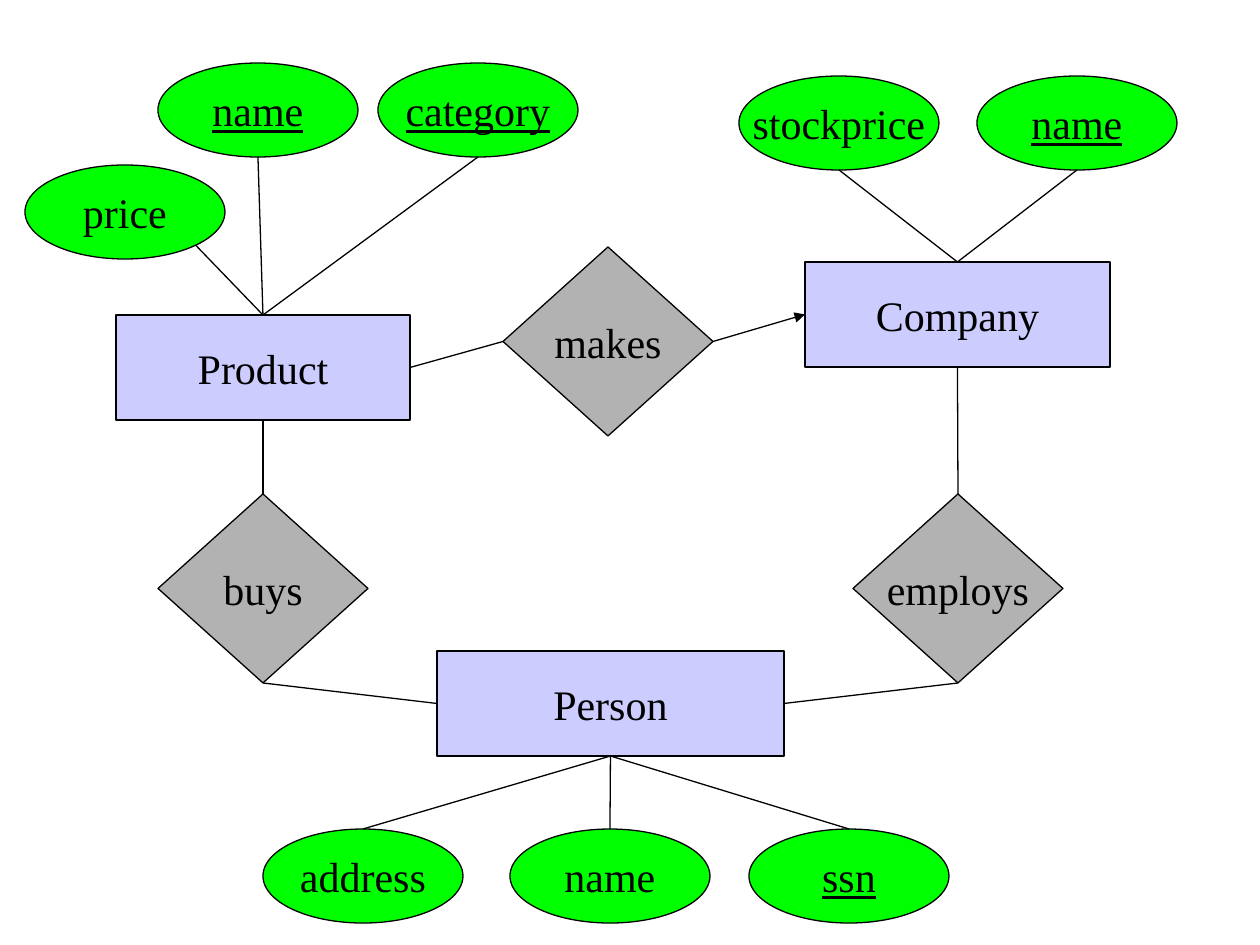
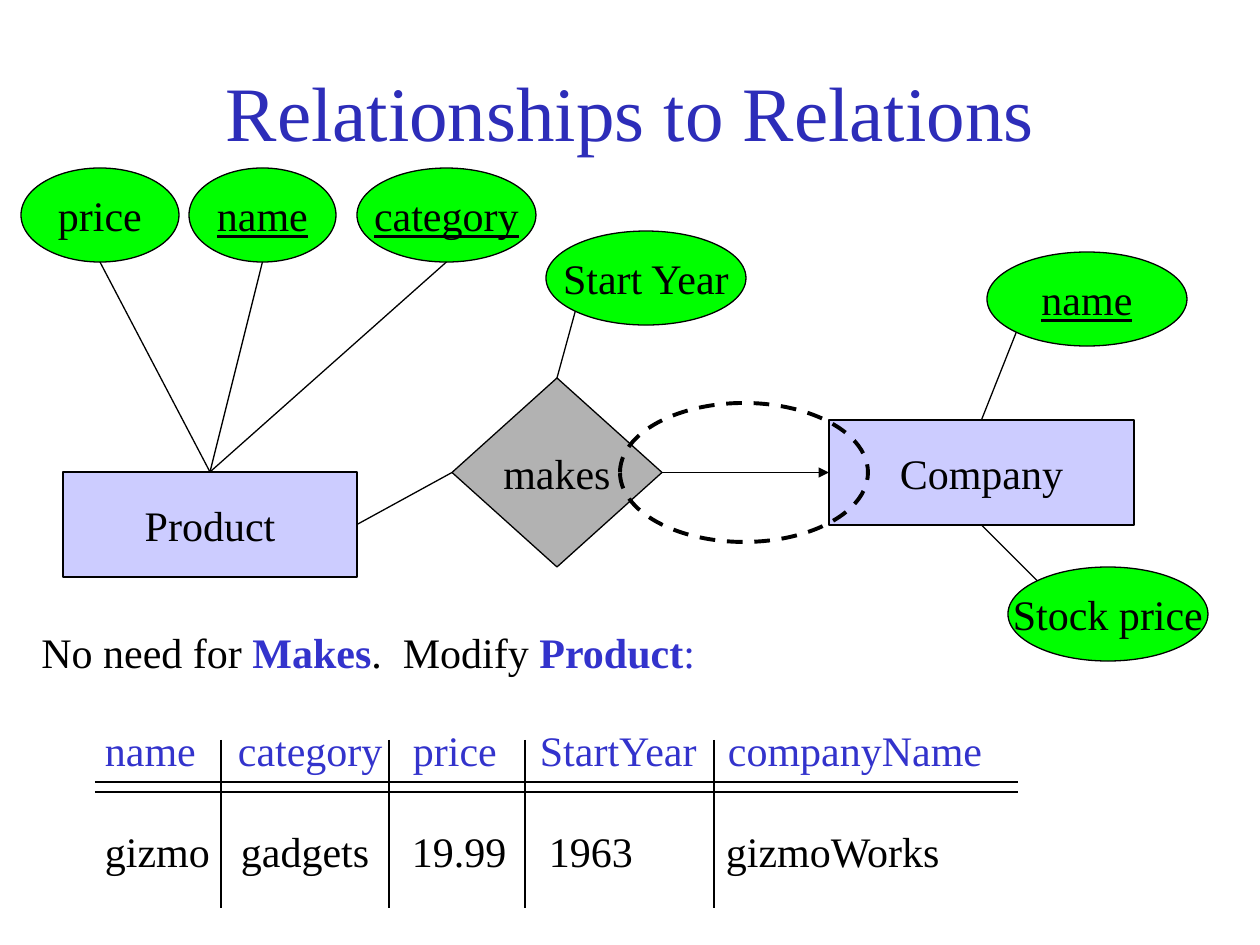
from math import cos, radians, sin

from pptx import Presentation
from pptx.dml.color import RGBColor
from pptx.enum.dml import MSO_LINE
from pptx.enum.shapes import MSO_CONNECTOR, MSO_SHAPE
from pptx.enum.text import MSO_ANCHOR, PP_ALIGN
from pptx.oxml.ns import qn
from pptx.util import Emu, Pt
from lxml import etree

STRAIGHT = MSO_CONNECTOR.STRAIGHT
RECTANGLE, OVAL, DIAMOND = MSO_SHAPE.RECTANGLE, MSO_SHAPE.OVAL, MSO_SHAPE.DIAMOND
LEFT, CENTER = PP_ALIGN.LEFT, PP_ALIGN.CENTER
TOP_ANCHOR, MIDDLE = MSO_ANCHOR.TOP, MSO_ANCHOR.MIDDLE
DASH = MSO_LINE.DASH

# Connection sites of rectangles and diamonds
TOP, LEFT_SIDE, BOTTOM, RIGHT_SIDE = range(4)
# Points on an oval, in degrees clockwise from the right
LOWER_RIGHT, OVAL_BOTTOM, LOWER_LEFT, UPPER_LEFT, OVAL_TOP = 45, 90, 135, 225, 270

FONT = "Times New Roman"
BLACK, BLUE, TITLE_BLUE = "000000", "3333CC", "2D2DB9"
ENTITY_FILL, RELATION_FILL, ATTRIBUTE_FILL = "CCCCFF", "B2B2B2", "00FF00"
TITLE_ONLY, BLANK = 5, 6


def px(length):
    return Emu(round(length * 914400 / 126))


def color(value):
    return RGBColor.from_string(value)


def write(para, text, size=24, ink=BLACK, bold=False, underline=False, align=LEFT):
    """Add one formatted span to a paragraph."""
    para.alignment = align
    span = para.add_run()
    span.text = text
    font = span.font
    font.name, font.size = FONT, Pt(size)
    font.bold, font.underline = bold, underline
    font.color.rgb = color(ink)


class Diagram:
    """Style and elements of one slide."""

    def __init__(self, deck, layout):
        self.page = deck.slides.add_slide(deck.slide_layouts[layout])
        self.shapes = self.page.shapes

    def title(self, text):
        box = self.shapes.title
        box.left, box.top, box.width, box.height = map(px, (95, 32, 1071, 158))
        box.text_frame.vertical_anchor = MIDDLE
        write(box.text_frame.paragraphs[0], text, size=44, ink=TITLE_BLUE, align=CENTER)

    def outline(self, item, width=0.75):
        item.line.color.rgb = color(BLACK)
        item.line.width = Pt(width)

    def node(self, kind, text, left, top, width, height, fill, underline=False):
        box = self.shapes.add_shape(kind, *map(px, (left, top, width, height)))
        box.shadow.inherit = False
        box.fill.solid()
        box.fill.fore_color.rgb = color(fill)
        self.outline(box)
        frame = box.text_frame
        frame.word_wrap = False
        frame.vertical_anchor = MIDDLE
        write(frame.paragraphs[0], text, underline=underline, align=CENTER)
        return box

    def entity(self, text, left, top, width):
        return self.node(RECTANGLE, text, left, top, width, 105, ENTITY_FILL)

    def relation(self, text, left, top):
        return self.node(DIAMOND, text, left, top, 210, 189, RELATION_FILL)

    def attribute(self, text, left, top, owner, side, angle, width=200, key=False):
        """Draw an oval and its line to the owner's side; keys are underlined."""
        oval = self.node(OVAL, text, left, top, width, 94, ATTRIBUTE_FILL, key)
        turn = radians(angle)
        end_x = left + width / 2 * (1 + cos(turn))
        end_y = top + 94 / 2 * (1 + sin(turn))
        self.line(0, 0, end_x, end_y).begin_connect(owner, side)
        return oval

    def line(self, x1, y1, x2, y2, arrow=False):
        line = self.shapes.add_connector(STRAIGHT, *map(px, (x1, y1, x2, y2)))
        self.outline(line)
        if arrow:
            stroke = line.line._get_or_add_ln()
            etree.SubElement(stroke, qn("a:tailEnd"), type="triangle")
        etree.SubElement(line._element.spPr, qn("a:effectLst"))
        return line

    def join(self, start, start_side, end, end_side, arrow=False):
        line = self.line(0, 0, 1, 1, arrow)
        line.begin_connect(start, start_side)
        line.end_connect(end, end_side)

    def dashed_oval(self, left, top, width, height):
        ring = self.shapes.add_shape(OVAL, *map(px, (left, top, width, height)))
        ring.shadow.inherit = False
        ring.fill.background()
        self.outline(ring, 2.25)
        ring.line.dash_style = DASH

    def sentence(self, left, top, width, height, spans):
        box = self.shapes.add_textbox(*map(px, (left, top, width, height)))
        box.text_frame.word_wrap = False
        for text, style in spans:
            write(box.text_frame.paragraphs[0], text, **style)

    def table(self, left, top, widths, row_height, rows, indents, inks):
        frame = self.shapes.add_table(
            len(rows), len(widths),
            *map(px, (left, top, sum(widths), row_height * len(rows))))
        grid = frame.table
        grid.first_row = grid.horz_banding = False
        for column, width in zip(grid.columns, widths):
            column.width = px(width)
        for r, row in enumerate(rows):
            grid.rows[r].height = px(row_height)
            for c, text in enumerate(row):
                cell = grid.cell(r, c)
                cell.fill.background()
                cell.vertical_anchor = TOP_ANCHOR
                cell.margin_left = px(indents[r][c])
                cell.margin_right = cell.margin_top = cell.margin_bottom = 0
                write(cell.text_frame.paragraphs[0], text, ink=inks[r])


def build_overview(deck):
    chart = Diagram(deck, BLANK)

    # Entities and relationships
    product = chart.entity("Product", 116, 315, 294)
    company = chart.entity("Company", 805, 262, 305)
    person = chart.entity("Person", 437, 651, 347)
    makes = chart.relation("makes", 503, 247)
    buys = chart.relation("buys", 158, 494)
    employs = chart.relation("employs", 853, 494)

    chart.join(product, RIGHT_SIDE, makes, LEFT_SIDE)
    chart.join(makes, RIGHT_SIDE, company, LEFT_SIDE, arrow=True)
    chart.join(buys, TOP, product, BOTTOM)
    chart.join(person, LEFT_SIDE, buys, BOTTOM)
    chart.join(person, RIGHT_SIDE, employs, BOTTOM)
    chart.join(employs, TOP, company, BOTTOM)

    # Attributes
    chart.attribute("price", 25, 165, product, TOP, LOWER_RIGHT)
    chart.attribute("name", 158, 63, product, TOP, OVAL_BOTTOM, key=True)
    chart.attribute("category", 378, 63, product, TOP, OVAL_BOTTOM, key=True)
    chart.attribute("stockprice", 739, 76, company, TOP, OVAL_BOTTOM)
    chart.attribute("name", 977, 76, company, TOP, OVAL_BOTTOM, key=True)
    chart.attribute("address", 263, 829, person, BOTTOM, OVAL_TOP)
    chart.attribute("name", 510, 829, person, BOTTOM, OVAL_TOP)
    chart.attribute("ssn", 749, 829, person, BOTTOM, OVAL_TOP, key=True)


def build_relations(deck):
    chart = Diagram(deck, TITLE_ONLY)
    chart.title("Relationships to Relations")

    # Entities and relationship
    product = chart.entity("Product", 63, 472, 294)
    company = chart.entity("Company", 829, 420, 305)
    makes = chart.relation("makes", 452, 378)
    chart.join(product, RIGHT_SIDE, makes, LEFT_SIDE)
    chart.join(makes, RIGHT_SIDE, company, LEFT_SIDE, arrow=True)

    # Attributes
    chart.attribute("price", 21, 168, product, TOP, OVAL_BOTTOM, width=158)
    chart.attribute("name", 189, 168, product, TOP, OVAL_BOTTOM, width=147, key=True)
    chart.attribute("category", 357, 168, product, TOP, OVAL_BOTTOM, width=179, key=True)
    chart.attribute("Start Year", 546, 231, makes, TOP, LOWER_LEFT)
    chart.attribute("name", 987, 252, company, TOP, LOWER_LEFT, key=True)
    chart.attribute("Stock price", 1008, 567, company, BOTTOM, UPPER_LEFT)
    chart.dashed_oval(620, 403, 248, 139)

    # Explanation
    strong = {"ink": BLUE, "bold": True}
    chart.sentence(29, 620, 680, 61, [
        ("No need for ", {}), ("Makes", strong), (".  Modify ", {}),
        ("Product", strong), (":", {"ink": BLUE})])

    # Resulting relation with its rules
    left, widths = 95, (126, 168, 136, 189, 304)
    chart.table(
        left, 729, widths, 101,
        rows=[("name", "category", "price", "StartYear", "companyName"),
              ("gizmo", "gadgets", "19.99", "1963", "gizmoWorks")],
        indents=[(10, 17, 24, 15, 14), (10, 20, 23, 24, 12)],
        inks=(BLUE, BLACK))
    for y in (782, 792):
        chart.line(left, y, left + sum(widths), y)
    x = left
    for width in widths[:-1]:
        x += width
        chart.line(x, 740, x, 908)


def main():
    deck = Presentation()
    deck.slide_width, deck.slide_height = px(1260), px(945)
    build_overview(deck)
    build_relations(deck)
    deck.save("out.pptx")


if __name__ == "__main__":
    main()
